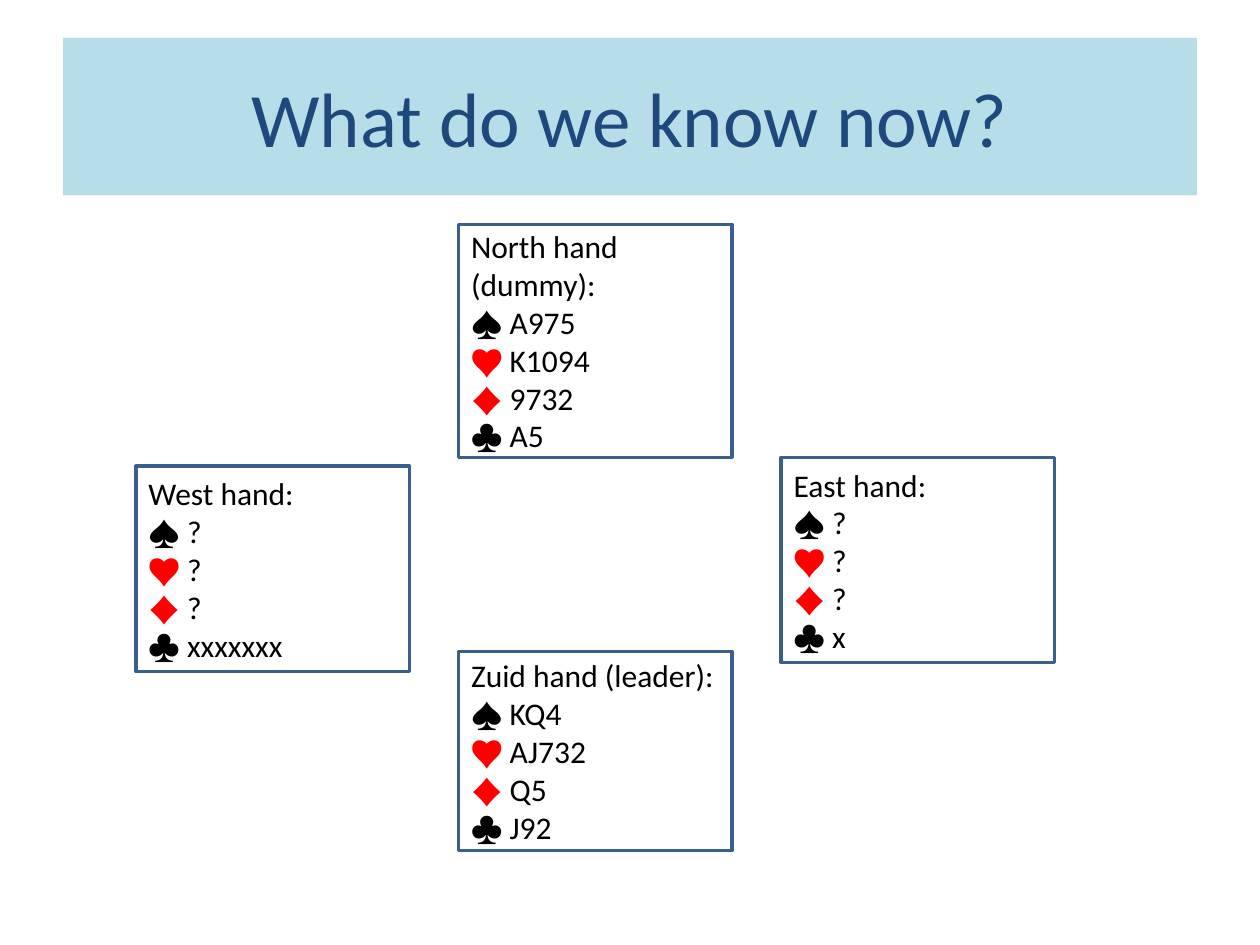
"""Build a bridge slide showing what is known of the four hands."""
from dataclasses import dataclass

from pptx import Presentation
from pptx.dml.color import RGBColor
from pptx.enum.shapes import MSO_SHAPE
from pptx.enum.text import MSO_ANCHOR, PP_ALIGN
from pptx.slide import Slide
from pptx.text.text import _Paragraph
from pptx.util import Inches, Pt

RECTANGLE = MSO_SHAPE.RECTANGLE
MIDDLE = MSO_ANCHOR.MIDDLE
LEFT, CENTER = PP_ALIGN.LEFT, PP_ALIGN.CENTER
TITLE_ONLY_LAYOUT = 5
HAND_WIDTH = 2.17


@dataclass(frozen=True)
class Theme:
    """Colours, font and sizes of the slide."""
    font: str = "Calibri"
    title_size: int = 44
    hand_size: int = 18
    border_width: int = 2
    title_fill: RGBColor = RGBColor(0xB7, 0xDE, 0xE8)
    title_text: RGBColor = RGBColor(0x1F, 0x49, 0x7D)
    hand_fill: RGBColor = RGBColor(0xFF, 0xFF, 0xFF)
    border: RGBColor = RGBColor(0x3A, 0x5F, 0x8C)
    black: RGBColor = RGBColor(0, 0, 0)
    red: RGBColor = RGBColor(0xFF, 0, 0)


@dataclass(frozen=True)
class Hand:
    """One player's cards, in the order of SUITS, and the box they sit in."""
    label: str
    cards: tuple[str, str, str, str]
    left: float
    top: float
    height: float


THEME = Theme()
SUITS = (("♠", THEME.black), ("♥", THEME.red), ("♦", THEME.red), ("♣", THEME.black))
HANDS = (
    Hand("North hand (dummy):", ("A975", "K1094", "9732", "A5"), 3.64, 1.78, 1.85),
    Hand("Zuid hand (leader):", ("KQ4", "AJ732", "Q5", "J92"), 3.64, 5.17, 1.58),
    Hand("West hand:", ("?", "?", "?", "xxxxxxx"), 1.08, 3.7, 1.63),
    Hand("East hand:", ("?", "?", "?", "x"), 6.2, 3.63, 1.63),
)


def add_run(paragraph: _Paragraph, text: str, size: int, color: RGBColor) -> None:
    """Append a formatted run to the paragraph."""
    run = paragraph.add_run()
    run.text = text
    for name, value in {"name": THEME.font, "size": Pt(size)}.items():
        setattr(run.font, name, value)
    run.font.color.rgb = color


def format_title(slide: Slide, text: str) -> None:
    """Place and fill the title placeholder."""
    title = slide.shapes.title
    position = {"left": 0.5, "top": 0.3, "width": 9, "height": 1.25}
    for name, value in position.items():
        setattr(title, name, Inches(value))
    title.fill.solid()
    title.fill.fore_color.rgb = THEME.title_fill
    title.text_frame.vertical_anchor = MIDDLE
    paragraph = title.text_frame.paragraphs[0]
    paragraph.alignment = CENTER
    add_run(paragraph, text, THEME.title_size, THEME.title_text)


def add_hand(slide: Slide, hand: Hand) -> None:
    """Draw a hand as a bordered box with one line per suit."""
    shape = slide.shapes.add_shape(
        RECTANGLE, Inches(hand.left), Inches(hand.top), Inches(HAND_WIDTH), Inches(hand.height)
    )
    shape.shadow.inherit = False
    shape.fill.solid()
    shape.fill.fore_color.rgb = THEME.hand_fill
    shape.line.color.rgb = THEME.border
    shape.line.width = Pt(THEME.border_width)
    frame = shape.text_frame
    for name, value in {"word_wrap": True, "vertical_anchor": MIDDLE}.items():
        setattr(frame, name, value)
    heading = frame.paragraphs[0]
    heading.alignment = LEFT
    add_run(heading, hand.label, THEME.hand_size, THEME.black)
    for (symbol, color), cards in zip(SUITS, hand.cards):
        paragraph = frame.add_paragraph()
        paragraph.alignment = LEFT
        add_run(paragraph, f"{symbol} ", THEME.hand_size, color)
        add_run(paragraph, cards, THEME.hand_size, THEME.black)


def main() -> None:
    """Create and save the presentation."""
    presentation = Presentation()
    presentation.slide_width = Inches(10)
    presentation.slide_height = Inches(7.5)
    slide = presentation.slides.add_slide(presentation.slide_layouts[TITLE_ONLY_LAYOUT])
    format_title(slide, "What do we know now?")
    for hand in HANDS:
        add_hand(slide, hand)
    presentation.save("out.pptx")


if __name__ == "__main__":
    main()
